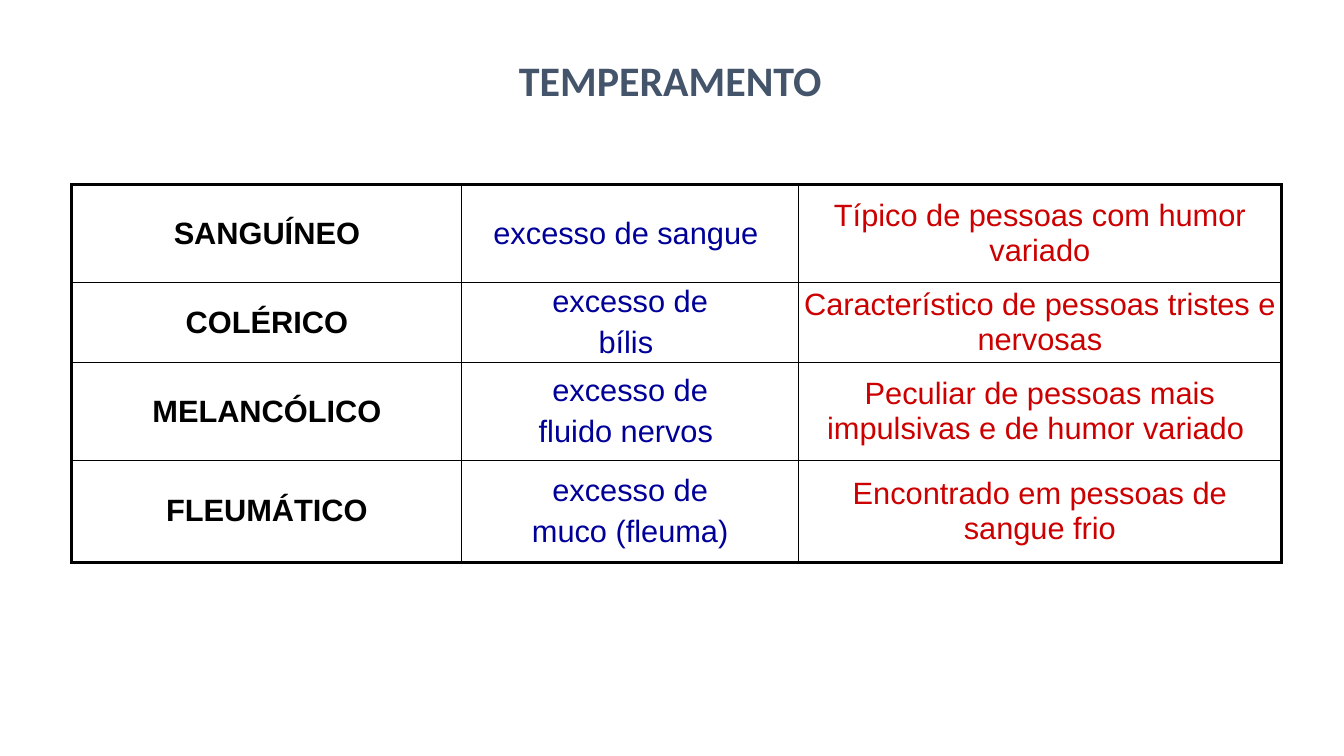
from lxml import etree
from pptx import Presentation
from pptx import util as u
from pptx.dml.color import RGBColor
from pptx.enum import text
from pptx.oxml import ns

BLACK = RGBColor(0x00, 0x00, 0x00)
BLUE = RGBColor(0x00, 0x00, 0x99)
RED = RGBColor(0xCC, 0x00, 0x00)
SLATE = RGBColor(0x44, 0x54, 0x6A)
THIN, THICK = u.Pt(1), u.Pt(2.25)

COLUMN_WIDTHS = [9.83, 8.48, 12.17]
ROW_HEIGHTS = [2.46, 2.03, 2.46, 2.57]
COLUMN_FONTS = [
    {"name": "Arial", "size": u.Pt(22), "bold": column == 0}
    for column in range(3)
]
COLUMN_COLORS = [BLACK, BLUE, RED]
TEMPERAMENTS = [
    ["SANGUÍNEO", "excesso de sangue ", "Típico de pessoas com humor variado"],
    ["COLÉRICO", "excesso de\nbílis ", "Característico de pessoas tristes e nervosas"],
    ["MELANCÓLICO", "excesso de\nfluido nervos ",
     "Peculiar de pessoas mais impulsivas e de humor variado "],
    ["FLEUMÁTICO", "excesso de\nmuco (fleuma)", "Encontrado em pessoas de sangue frio"],
]


def format_paragraph(paragraph, font_values, color):
    paragraph.alignment = text.PP_ALIGN.CENTER
    for name, value in font_values.items():
        setattr(paragraph.font, name, value)
    paragraph.font.color.rgb = color


def add_border(cell, side, width):
    line = etree.SubElement(cell._tc.get_or_add_tcPr(), ns.qn("a:" + side), w=str(width))
    fill = etree.SubElement(line, ns.qn("a:solidFill"))
    etree.SubElement(fill, ns.qn("a:srgbClr"), val=str(BLACK))


presentation = Presentation()
presentation.slide_width = u.Cm(33.87)
presentation.slide_height = u.Cm(19.05)
slide = presentation.slides.add_slide(presentation.slide_layouts[6])

# Table
table = slide.shapes.add_table(
    len(ROW_HEIGHTS), len(COLUMN_WIDTHS), u.Cm(1.81), u.Cm(4.65),
    u.Cm(sum(COLUMN_WIDTHS)), u.Cm(sum(ROW_HEIGHTS))).table
table.first_row = table.horz_banding = False
for column, width in zip(table.columns, COLUMN_WIDTHS):
    column.width = u.Cm(width)
for row, height in zip(table.rows, ROW_HEIGHTS):
    row.height = u.Cm(height)

# Cells: thick outer frame, thin inner rules
last_row, last_column = len(ROW_HEIGHTS) - 1, len(COLUMN_WIDTHS) - 1
for r, labels in enumerate(TEMPERAMENTS):
    for c, label in enumerate(labels):
        cell = table.cell(r, c)
        cell_format = {"margin_left": 0, "margin_right": 0, "margin_top": 0,
                       "margin_bottom": 0, "vertical_anchor": text.MSO_ANCHOR.MIDDLE}
        for name, value in cell_format.items():
            setattr(cell, name, value)
        outer_sides = {"lnL": c == 0, "lnR": c == last_column,
                       "lnT": r == 0, "lnB": r == last_row}
        for side, is_outer in outer_sides.items():
            add_border(cell, side, THICK if is_outer else THIN)
        cell.fill.background()
        cell.text = label
        for index, paragraph in enumerate(cell.text_frame.paragraphs):
            if index:
                paragraph.space_before = u.Pt(4.4)
            format_paragraph(paragraph, COLUMN_FONTS[c], COLUMN_COLORS[c])

# Title
title = slide.shapes.add_textbox(u.Cm(2.72), u.Cm(1.12), u.Cm(28.35), u.Cm(1.8))
title.text_frame.word_wrap = True
title.text_frame.vertical_anchor = text.MSO_ANCHOR.MIDDLE
title.text_frame.text = "TEMPERAMENTO"
format_paragraph(title.text_frame.paragraphs[0],
                 {"name": "Calibri", "size": u.Pt(30), "bold": True}, SLATE)

presentation.save("out.pptx")
